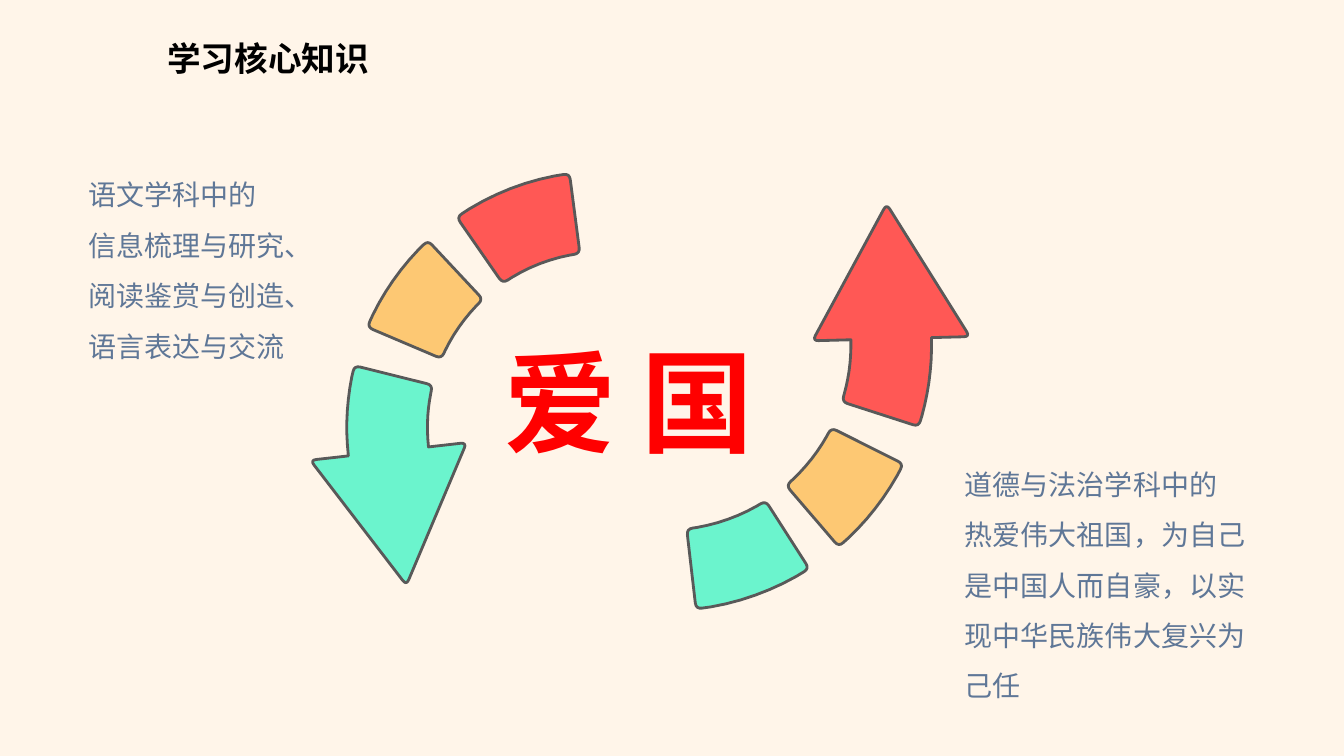
import math

from lxml import etree
from pptx import Presentation
from pptx.dml.color import RGBColor
from pptx.enum.text import MSO_AUTO_SIZE, PP_ALIGN
from pptx.oxml.ns import qn
from pptx.util import Inches, Pt

LEFT, CENTER, JUSTIFY = PP_ALIGN.LEFT, PP_ALIGN.CENTER, PP_ALIGN.JUSTIFY
FIT_SHAPE = MSO_AUTO_SIZE.SHAPE_TO_FIT_TEXT

COLORS = {
    "background": "FFF5E9", "title": "000000", "keyword": "FF0000", "body": "5F7797",
    "red": "FF5855", "yellow": "FDC873", "mint": "6BF4CD", "outline": "595959",
}
FONT = "Noto Sans CJK SC"

# A grid of square cells; all lengths below count its columns and rows
COLUMNS, ROWS = 1333, 750

# The band that is bent into a ring: two blocks, then an arrow.
# Lengths run along its middle line, offsets across it (positive is outward).
HALF_BAND, HALF_HEAD = 40, 78
BLOCKS = [(0, 102), (133, 222)]
ARROW_TAIL, ARROW_NECK, ARROW_TIP = 256, 332, 453
TIP_OFFSET = 36
CORNER = 6       # how far from a corner its rounding begins
ARC_STEPS = 8    # straight steps that make up one bent side
ROTATION = 345   # degrees set on every piece


def turn(degrees):
    """The complex factor that turns a point clockwise by an angle."""
    return complex(math.cos(math.radians(degrees)), math.sin(math.radians(degrees)))


def block(start, end):
    """Corners of a block as (length, offset, is_rounded)."""
    return [(start, -HALF_BAND, True), (start, HALF_BAND, True),
            (end, HALF_BAND, True), (end, -HALF_BAND, True)]


def arrow():
    """Corners of the arrow; those where shaft meets head stay sharp."""
    return [(ARROW_TAIL, -HALF_BAND, True), (ARROW_TAIL, HALF_BAND, True),
            (ARROW_NECK, HALF_BAND, False), (ARROW_NECK, HALF_HEAD, True),
            (ARROW_TIP, TIP_OFFSET, True), (ARROW_NECK, -HALF_HEAD, True),
            (ARROW_NECK, -HALF_BAND, False)]


def bend(corners, center, radius, start_angle):
    """Lay flat corners around a circle; sides along the band become arcs."""
    def place(length, offset):
        return center + (radius + offset) * turn(start_angle - math.degrees(length / radius))

    points = []
    for (length, offset, rounded), (end, end_offset, _) in zip(corners, corners[1:] + corners[:1]):
        points.append((place(length, offset), rounded))
        if offset == end_offset:
            step = (end - length) / ARC_STEPS
            points += [(place(length + i * step, offset), False) for i in range(1, ARC_STEPS)]
    return points


def round_corners(points):
    """Replace every rounded corner by a short quadratic curve."""
    outline = []
    for i, (corner, rounded) in enumerate(points):
        if not rounded:
            outline.append(corner)
            continue
        before = points[i - 1][0] - corner
        after = points[(i + 1) % len(points)][0] - corner
        before, after = CORNER * before / abs(before), CORNER * after / abs(after)
        for t in (0, 0.25, 0.5, 0.75, 1):
            outline.append(corner + (1 - t) ** 2 * before + t ** 2 * after)
    return outline


def middle(values):
    return (min(values) + max(values)) / 2


class SlideBuilder:
    def __init__(self, presentation):
        self.column = presentation.slide_width / COLUMNS
        self.row = presentation.slide_height / ROWS
        self.slide = presentation.slides.add_slide(presentation.slide_layouts[6])
        fill = self.slide.background.fill
        fill.solid()
        fill.fore_color.rgb = self.color("background")

    def color(self, name):
        return RGBColor.from_string(COLORS[name])

    def text(self, place, lines, size, color, bold=False, align=LEFT, wrap=False, spacing=None):
        left, top, width, height = place
        shape = self.slide.shapes.add_textbox(
            round(left * self.column), round(top * self.row),
            round(width * self.column), round(height * self.row))
        frame = shape.text_frame
        frame.word_wrap = wrap
        frame.auto_size = FIT_SHAPE
        frame.text = "\n".join(lines)
        for paragraph in frame.paragraphs:
            paragraph.alignment = align
            paragraph.line_spacing = spacing
            font = paragraph.font
            font.size, font.bold, font.name = Pt(size), bold, FONT
            font.color.rgb = self.color(color)
            defaults = paragraph._p.pPr.find(qn("a:defRPr"))
            etree.SubElement(defaults, qn("a:ea"), typeface=FONT)

    def ring(self, center, radius, start_angle, colors):
        group = self.slide.shapes.add_group_shape()
        pieces = [block(start, end) for start, end in BLOCKS] + [arrow()]
        for corners, color in zip(pieces, colors):
            outline = round_corners(bend(corners, center, radius, start_angle))
            self.piece(group, outline, color)

    def piece(self, group, outline, color):
        # Draw the piece turned back, so that its rotation puts it in place
        tilt = turn(ROTATION)
        upright = [complex(p.real * self.column, p.imag * self.row) / tilt for p in outline]
        pivot = complex(middle([p.real for p in upright]), middle([p.imag for p in upright]))
        shift = pivot * tilt - pivot
        first, *others = [(p.real, p.imag) for p in upright]
        builder = group.shapes.build_freeform(*first)
        builder.add_line_segments(others, close=True)
        shape = builder.convert_to_shape(round(shift.real), round(shift.imag))
        shape.rotation = ROTATION
        shape.shadow.inherit = False
        shape.fill.solid()
        shape.fill.fore_color.rgb = self.color(color)
        shape.line.color.rgb = self.color("outline")
        shape.line.width = Pt(2)


def main():
    presentation = Presentation()
    presentation.slide_width, presentation.slide_height = Inches(13.33), Inches(7.5)
    builder = SlideBuilder(presentation)

    # Title
    builder.text((156, 33, 222, 50), ["学习核心知识"], 24, "title", bold=True, align=JUSTIFY)

    # Two half rings, facing each other, around the keyword
    colors = ["mint", "yellow", "red"]
    builder.ring(complex(660, 342), 224, 83.4, colors)
    builder.ring(complex(598, 424), 214, 262.5, colors[::-1])
    builder.text((473, 325, 302, 145), ["爱 国"], 80, "keyword", bold=True, align=CENTER)

    # Subject notes on either side
    notes = [
        ((78, 155, 237, 207),
         ["语文学科中的", "信息梳理与研究、阅读鉴赏与创造、语言表达与交流"]),
        ((947, 442, 321, 257),
         ["道德与法治学科中的", "热爱伟大祖国，为自己是中国人而自豪，以实现中华民族伟大复兴为己任"]),
    ]
    for place, lines in notes:
        builder.text(place, lines, 20, "body", wrap=True, spacing=1.5)

    presentation.save("out.pptx")


if __name__ == "__main__":
    main()
